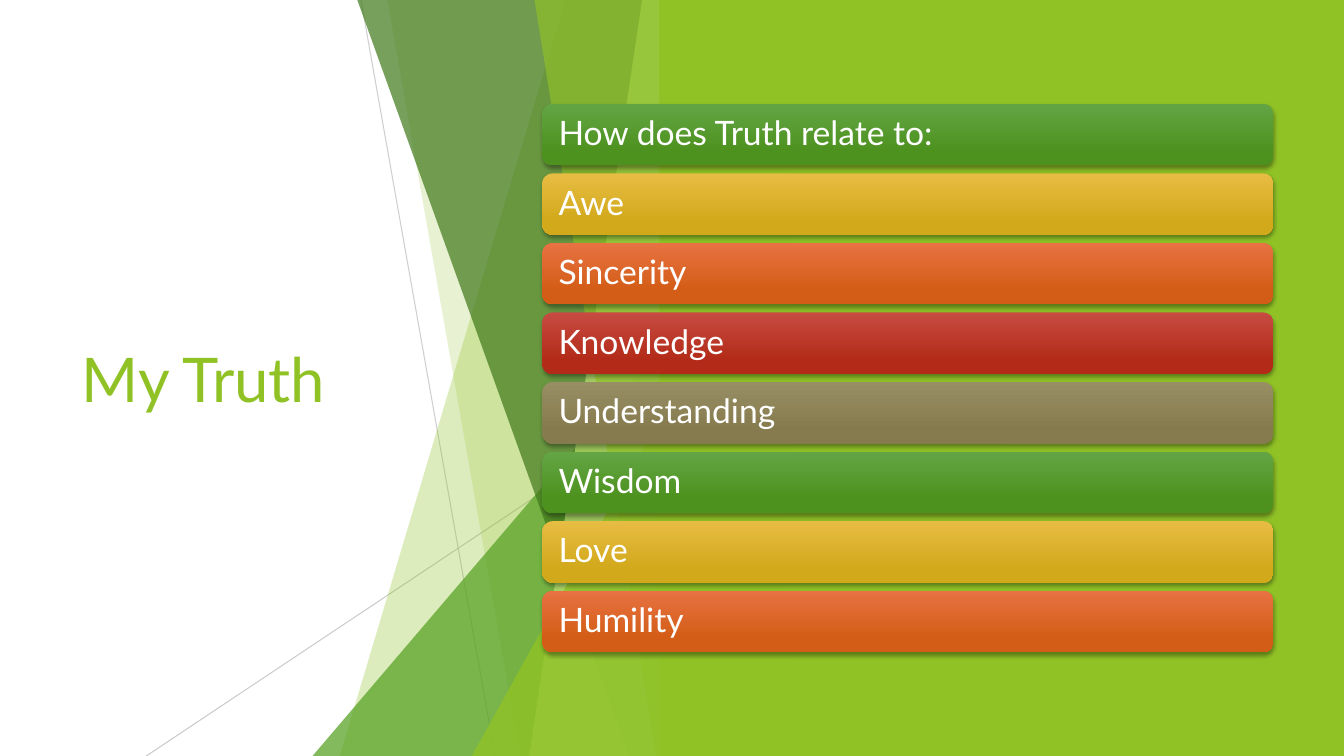
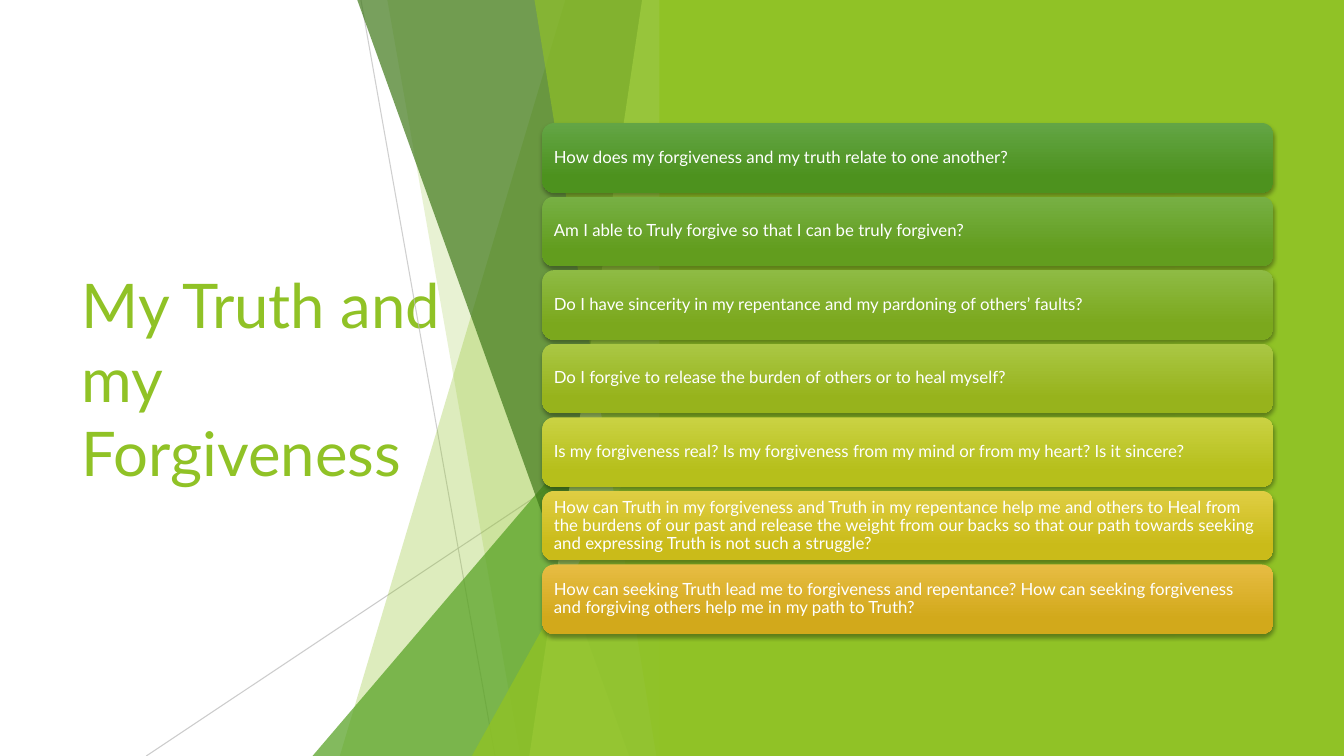
import itertools

import lxml.etree
import pptx
import pptx.dml.color
import pptx.enum.shapes
import pptx.enum.text
import pptx.oxml.ns
import pptx.util

Inches = pptx.util.Inches
Pt = pptx.util.Pt
RGBColor = pptx.dml.color.RGBColor
SHAPE = pptx.enum.shapes.MSO_SHAPE
qn = pptx.oxml.ns.qn

# Shared colours
WHITE = RGBColor(0xFF, 0xFF, 0xFF)
BLACK = RGBColor(0x00, 0x00, 0x00)
GREY = RGBColor(0xBF, 0xBF, 0xBF)
LIME = RGBColor(0x90, 0xC2, 0x26)
PALE_LIME = RGBColor(0xC0, 0xE4, 0x74)
LEAF = RGBColor(0x54, 0xA0, 0x21)
FOREST = RGBColor(0x3F, 0x78, 0x19)

# Card gradients: top colour, bottom colour
GREEN = RGBColor(0x63, 0xA5, 0x45), RGBColor(0x4D, 0x92, 0x1E)
GRASS = RGBColor(0x77, 0xB0, 0x44), RGBColor(0x62, 0x9D, 0x1E)
MOSS = RGBColor(0x8E, 0xBB, 0x44), RGBColor(0x7B, 0xA8, 0x1D)
LIGHT_LIME = RGBColor(0xAA, 0xC7, 0x44), RGBColor(0x97, 0xB3, 0x1C)
CITRON = RGBColor(0xCA, 0xD2, 0x43), RGBColor(0xB6, 0xBF, 0x1B)
YELLOW = RGBColor(0xDF, 0xCE, 0x43), RGBColor(0xCA, 0xBB, 0x19)
GOLD = RGBColor(0xE7, 0xBC, 0x43), RGBColor(0xD2, 0xA9, 0x1B)
ORANGE = RGBColor(0xE8, 0x72, 0x42), RGBColor(0xD3, 0x5D, 0x16)
RED = RGBColor(0xC7, 0x4B, 0x42), RGBColor(0xB3, 0x2B, 0x18)
OLIVE = RGBColor(0x98, 0x8E, 0x64), RGBColor(0x85, 0x7B, 0x4E)


class Deck:
    """Holds the style and the current slide."""

    font = "Lato"
    width, height = 13.33, 7.5
    facet_right = 6.66
    card_left, card_width = 5.38, 7.25

    def __init__(self):
        self.prs = pptx.Presentation()
        self.prs.slide_width = Inches(self.width)
        self.prs.slide_height = Inches(self.height)
        self.slide = None

    def new_slide(self, title):
        self.slide = self.prs.slides.add_slide(self.prs.slide_layouts[5])
        fill = self.slide.background.fill
        fill.solid()
        fill.fore_color.rgb = WHITE
        self.title(title)
        self.facets()

    def run(self, p, text, size, color):
        r = p.add_run()
        r.text = text
        r.font.name = self.font
        r.font.size = Pt(size)
        r.font.color.rgb = color

    def title(self, text):
        sp = self.slide.shapes.title
        sp.left, sp.top = Inches(0.71), Inches(1.51)
        sp.width, sp.height = Inches(3.88), Inches(4.48)
        tf = sp.text_frame
        tf.word_wrap = True
        tf.auto_size = pptx.enum.text.MSO_AUTO_SIZE.NONE
        tf.vertical_anchor = pptx.enum.text.MSO_ANCHOR.MIDDLE
        p = tf.paragraphs[0]
        p.alignment = pptx.enum.text.PP_ALIGN.LEFT
        self.run(p, text, 44, LIME)

    def opacity(self, parent, percent):
        for color in parent.iter(qn("a:srgbClr")):
            alpha = lxml.etree.SubElement(color, qn("a:alpha"))
            alpha.set("val", str(percent * 1000))

    def paint(self, sp, color, percent=100):
        sp.shadow.inherit = False
        sp.line.fill.background()
        sp.fill.solid()
        sp.fill.fore_color.rgb = color
        if percent < 100:
            self.opacity(sp._element.spPr, percent)

    def line(self, x1, y1, x2, y2, percent):
        cx = self.slide.shapes.add_connector(
            pptx.enum.shapes.MSO_CONNECTOR.STRAIGHT,
            Inches(x1), Inches(y1), Inches(x2), Inches(y2))
        cx.line.color.rgb = GREY
        cx.line.width = Pt(0.75)
        spPr = cx._element.spPr
        self.opacity(spPr, percent)
        lxml.etree.SubElement(spPr, qn("a:effectLst"))

    def band(self, top_x, bottom_x, color, percent):
        """Full-height band with a slanted left edge."""
        right, top, bottom = Inches(self.facet_right), Inches(-0.01), Inches(self.height)
        fb = self.slide.shapes.build_freeform(Inches(top_x), top)
        fb.add_line_segments([(right, top), (right, bottom), (Inches(bottom_x), bottom)])
        self.paint(fb.convert_to_shape(), color, percent)

    def corner(self, left, top, color, percent):
        """Right triangle standing on the bottom edge."""
        sp = self.slide.shapes.add_shape(
            SHAPE.ISOSCELES_TRIANGLE, Inches(left), Inches(top),
            Inches(self.facet_right - left), Inches(self.height - top))
        sp.adjustments[0] = 1
        self.paint(sp, color, percent)

    def facets(self):
        self.line(3.58, 0, 4.91, 7.5, 75)
        self.line(6.66, 4.03, 1.45, 7.5, 80)
        self.band(5.61, 3.37, LIME, 30)
        self.band(3.84, 5.16, LIME, 20)
        self.corner(3.1, 3.33, LEAF, 72)
        self.band(3.54, 6.24, FOREST, 70)
        self.band(6.37, 5.25, PALE_LIME, 70)
        self.band(5.3, 6.51, LIME, 65)
        self.corner(4.68, 3.93, LIME, 80)
        # Solid panel behind the cards
        left = 6.54
        panel = self.slide.shapes.add_shape(
            SHAPE.RECTANGLE, Inches(left), 0,
            Inches(self.width - left), Inches(self.height))
        self.paint(panel, LIME)

    def card(self, text, top, height, colors, size, inset):
        sp = self.slide.shapes.add_shape(
            SHAPE.ROUNDED_RECTANGLE, Inches(self.card_left), Inches(top),
            Inches(self.card_width), Inches(height))
        sp.line.fill.background()
        sp.fill.gradient()
        sp.fill.gradient_angle = 270
        for stop, color, position in zip(sp.fill.gradient_stops, colors, (0, 0.78)):
            stop.color.rgb = color
            stop.position = position
        self.soft_shadow(sp)
        tf = sp.text_frame
        tf.word_wrap = True
        tf.vertical_anchor = pptx.enum.text.MSO_ANCHOR.MIDDLE
        tf.margin_left = tf.margin_right = Inches(inset)
        tf.margin_top = tf.margin_bottom = Inches(0.05)
        p = tf.paragraphs[0]
        p.alignment = pptx.enum.text.PP_ALIGN.LEFT
        p.line_spacing = 0.9
        self.run(p, text, size, WHITE)

    def soft_shadow(self, sp):
        sp.shadow.inherit = False
        effects = sp._element.spPr.find(qn("a:effectLst"))
        shadow = lxml.etree.SubElement(
            effects, qn("a:outerShdw"), blurRad=str(Pt(3)), dist=str(Pt(2)),
            dir="5400000", algn="ctr", rotWithShape="0")
        lxml.etree.SubElement(shadow, qn("a:srgbClr"), val=str(BLACK))
        self.opacity(shadow, 35)

    def cards(self, texts, palette, top, height, pitch, size, inset):
        for i, (text, colors) in enumerate(zip(texts, itertools.cycle(palette))):
            self.card(text, top + i * pitch, height, colors, size, inset)


def main():
    deck = Deck()

    # Truth and its companions
    deck.new_slide("My Truth")
    deck.cards(
        ["How does Truth relate to:", "Awe", "Sincerity", "Knowledge",
         "Understanding", "Wisdom", "Love", "Humility"],
        [GREEN, GOLD, ORANGE, RED, OLIVE],
        top=1.03, height=0.61, pitch=0.69, size=24, inset=0.13)

    # Truth and forgiveness
    deck.new_slide("My Truth and my Forgiveness")
    deck.cards(
        ["How does my forgiveness and my truth relate to one another?",
         "Am I able to Truly forgive so that I can be truly forgiven?",
         "Do I have sincerity in my repentance and my pardoning of others’ faults?",
         "Do I forgive to release the burden of others or to heal myself?",
         "Is my forgiveness real? Is my forgiveness from my mind or from my heart? "
         "Is it sincere?",
         "How can Truth in my forgiveness and Truth in my repentance help me and "
         "others to Heal from the burdens of our past and release the weight from "
         "our backs so that our path towards seeking and expressing Truth is not "
         "such a struggle?",
         "How can seeking Truth lead me to forgiveness and repentance? How can "
         "seeking forgiveness and forgiving others help me in my path to Truth?"],
        [GREEN, GRASS, MOSS, LIGHT_LIME, CITRON, YELLOW, GOLD],
        top=1.22, height=0.69, pitch=0.73, size=12, inset=0.08)

    deck.prs.save("out.pptx")


if __name__ == "__main__":
    main()
